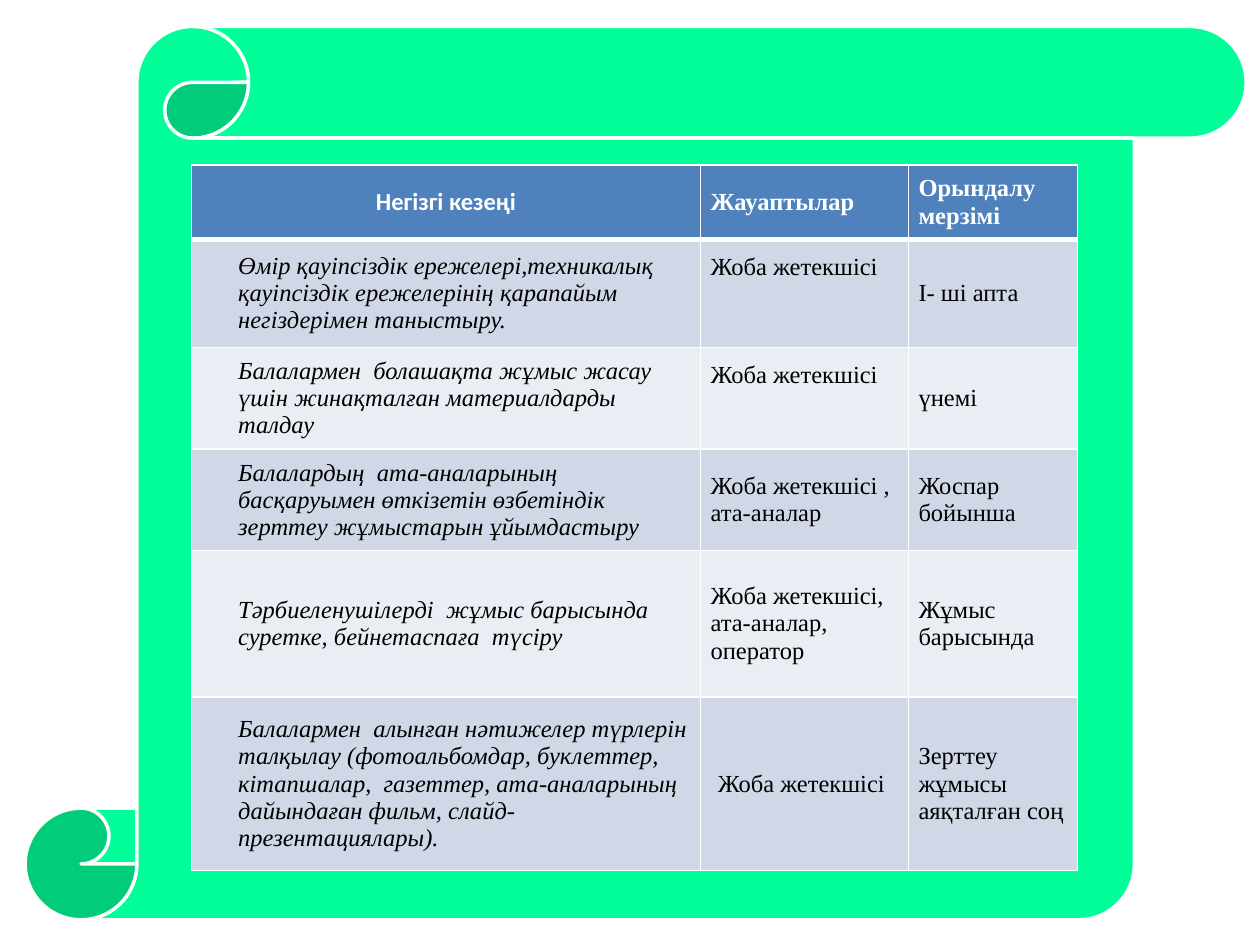
import pptx
import pptx.util
import pptx.dml.color
import pptx.enum.shapes
import pptx.enum.text
import pptx.oxml
import pptx.oxml.ns

Inches, Pt = pptx.util.Inches, pptx.util.Pt
Shape = pptx.enum.shapes.MSO_SHAPE
Align = pptx.enum.text.PP_ALIGN
Anchor = pptx.enum.text.MSO_ANCHOR

SERIF = "Times New Roman"
WHITE, BLACK, GREEN, BLUE = "FFFFFF", "000000", "00FF99", "4F81BD"
BANDS = ["D0D8E8", "E9EDF4"]
COLS = [4.04, 1.65, 1.34]
ROWS = [0.55, 0.86, 0.63, 0.52, 1.16, 1.38]
TEXTS = [
    ("Негізгі кезеңі", "Жауаптылар", "Орындалу мерзімі"),
    ("Өмір қауіпсіздік ережелері,техникалық қауіпсіздік ережелерінің "
     "қарапайым негіздерімен таныстыру.",
     "Жоба жетекшісі", "І- ші апта"),
    ("Балалармен  болашақта жұмыс жасау үшін жинақталған материалдарды талдау",
     "Жоба жетекшісі", "үнемі"),
    ("Балалардың  ата-аналарының басқаруымен өткізетін өзбетіндік зерттеу "
     "жұмыстарын ұйымдастыру",
     "Жоба жетекшісі , ата-аналар", "Жоспар бойынша"),
    ("Тәрбиеленушілерді  жұмыс барысында суретке, бейнетаспаға  түсіру",
     "Жоба жетекшісі, ата-аналар, оператор", "Жұмыс барысында"),
    ("Балалармен  алынған нәтижелер түрлерін талқылау (фотоальбомдар, "
     "буклеттер, кітапшалар,  газеттер, ата-аналарының дайындаған фильм, "
     "слайд-презентациялары).",
     "Жоба жетекшісі ", "Зерттеу жұмысы аяқталған соң"),
]


def rgb(code):
    return pptx.dml.color.RGBColor.from_string(code)


def paint(cell, fill, top, base):
    """Fill a cell and draw its white borders, widths in points."""
    cell.fill.solid()
    cell.fill.fore_color.rgb = rgb(fill)
    props = cell._tc.get_or_add_tcPr()
    sides = {"L": 1, "R": 1, "T": top, "B": base}
    for spot, (side, width) in enumerate(sides.items()):
        props.insert(spot, pptx.oxml.parse_xml(
            f'<a:ln{side} {pptx.oxml.ns.nsdecls("a")} w="{Pt(width)}">'
            f'<a:solidFill><a:srgbClr val="{WHITE}"/></a:solidFill>'
            f'</a:ln{side}>'))


def write(cell, text, row, col):
    head, stage = row == 0, col == 0
    high = col == 1 and row in (1, 2)
    cell.margin_left = cell.margin_right = Inches(0.08)
    cell.margin_top = cell.margin_bottom = Inches(0.08)
    cell.vertical_anchor = Anchor.TOP if high else Anchor.MIDDLE
    cell.text = text
    para = cell.text_frame.paragraphs[0]
    font = para.font
    font.name = "Calibri" if head and stage else SERIF
    font.size = Pt(14)
    font.bold = head
    font.italic = stage and not head
    font.color.rgb = rgb(WHITE if head else BLACK)
    centred = (row, col) in ((0, 0), (len(ROWS) - 1, 1))
    para.alignment = Align.CENTER if centred else Align.LEFT
    if head != stage:
        para.space_before = Pt(2.9)
    if stage and not head:
        props = para._p.get_or_add_pPr()
        props.set("marL", str(Inches(0.29)))
        props.set("indent", "0")
    if high:
        para.line_spacing = 1.15
        para.space_after = Pt(10)


def scroll(slide, box):
    shape = slide.shapes.add_shape(Shape.VERTICAL_SCROLL, *map(Inches, box))
    shape.shadow.inherit = False
    shape.fill.solid()
    shape.fill.fore_color.rgb = rgb(GREEN)
    shape.line.color.rgb = rgb(WHITE)
    shape.line.width = Pt(2)


def plan(slide, box):
    """Place the table of stages, people and dates."""
    frame = slide.shapes.add_table(len(ROWS), len(COLS), *map(Inches, box))
    table = frame.table
    for col, width in zip(table.columns, COLS):
        col.width = Inches(width)
    for row, height in zip(table.rows, ROWS):
        row.height = Inches(height)
    frame.height = Inches(box[3])
    for row, line in enumerate(TEXTS):
        fill = BANDS[(row - 1) % 2] if row else BLUE
        for col, text in enumerate(line):
            cell = table.cell(row, col)
            write(cell, text, row, col)
            paint(cell, fill, 3 if row == 1 else 1, 1 if row else 3)


def main():
    deck = pptx.Presentation()
    deck.slide_width, deck.slide_height = Inches(10), Inches(7.5)
    slide = deck.slides.add_slide(deck.slide_layouts[6])
    scroll(slide, (0.2, 0.21, 9.69, 7.09))
    plan(slide, (1.52, 1.31, sum(COLS), 5.75))
    deck.save("out.pptx")


if __name__ == "__main__":
    main()
